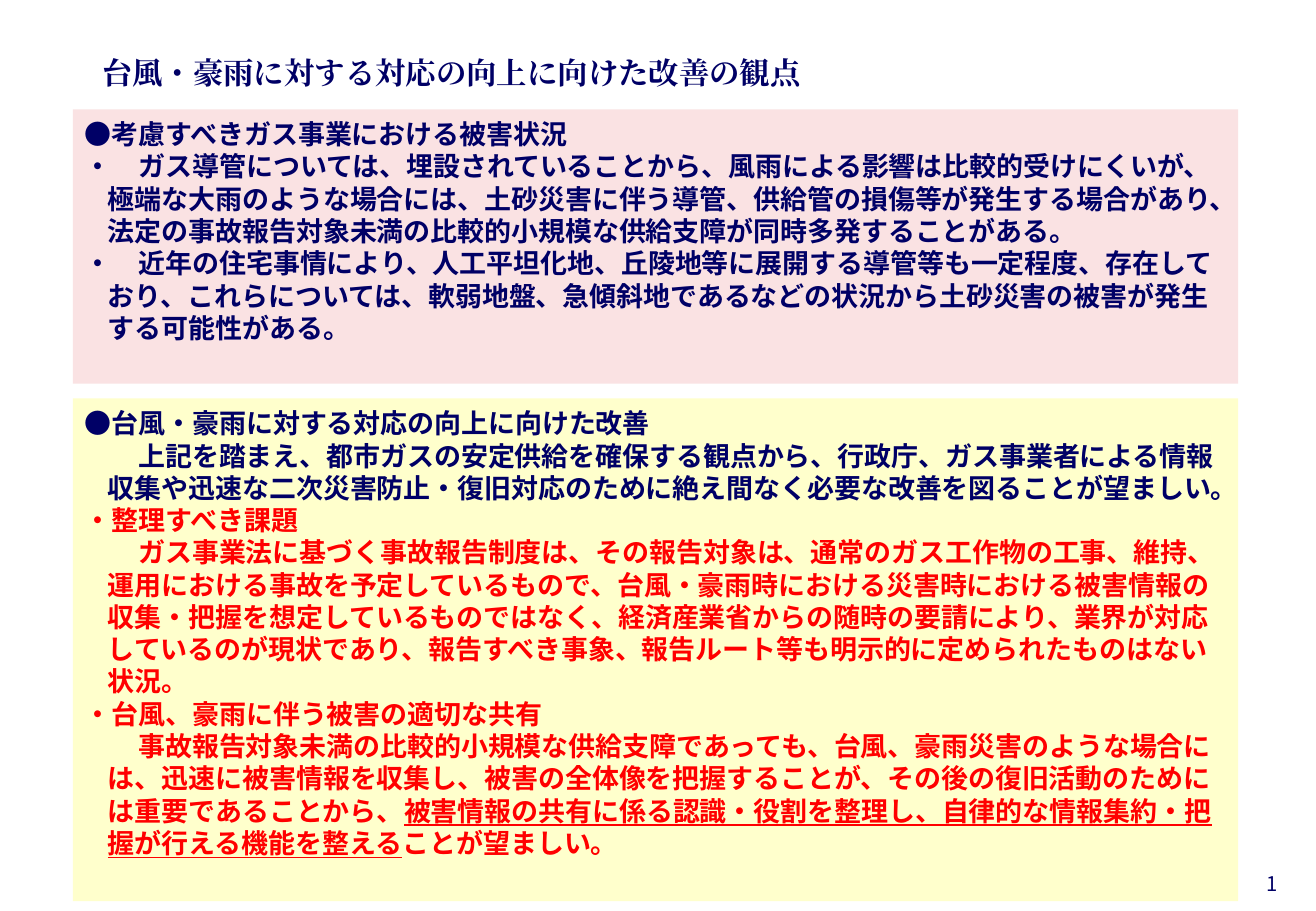
from dataclasses import dataclass
from typing import Any

from lxml.etree import SubElement
from pptx import Presentation
from pptx.dml.color import RGBColor
from pptx.enum.lang import MSO_LANGUAGE_ID
from pptx.enum.shapes import MSO_SHAPE
from pptx.enum.text import MSO_ANCHOR, MSO_AUTO_SIZE, PP_ALIGN
from pptx.oxml.ns import qn
from pptx.util import Inches, Pt

NAVY = RGBColor(0x00, 0x00, 0x66)
RED = RGBColor(0xFF, 0x00, 0x00)
PINK = RGBColor(0xFA, 0xE2, 0xE3)
CREAM = RGBColor(0xFF, 0xFF, 0xCC)
SANS = "Noto Sans CJK JP"
SERIF = "Times New Roman"

WIDE, HIGH = Inches(10.83), Inches(7.5)
HANG, LEAD = Inches(-0.19), Inches(0.25)
FRAME = {"word_wrap": True, "auto_size": MSO_AUTO_SIZE.NONE,
         "margin_left": Inches(0.1), "margin_right": Inches(0.1)}


@dataclass(frozen=True)
class Area:
    """Place and size in percent of the slide."""
    left: float
    top: float
    width: float
    height: float

    def box(self) -> tuple[int, int, int, int]:
        return (round(WIDE * self.left / 100), round(HIGH * self.top / 100),
                round(WIDE * self.width / 100), round(HIGH * self.height / 100))


@dataclass(frozen=True)
class Run:
    text: str
    line: bool = False


@dataclass(frozen=True)
class Para:
    runs: tuple[Run, ...]
    color: RGBColor = NAVY
    first: int = HANG


@dataclass(frozen=True)
class Panel:
    area: Area
    fill: RGBColor
    paras: tuple[Para, ...]


def put(target: Any, values: dict[str, Any]) -> None:
    for name, value in values.items():
        setattr(target, name, value)


def write(para: Any, text: str, face: str, size: int, color: RGBColor,
          **more: Any) -> None:
    run = para.add_run()
    run.text = text
    run.font.color.rgb = color
    put(run.font, {"name": face, "size": Pt(size),
                   "language_id": MSO_LANGUAGE_ID.JAPANESE, **more})
    SubElement(run.font._element, qn("a:ea")).set("typeface", face)


def draw(shapes: Any, panel: Panel) -> None:
    shape = shapes.add_shape(MSO_SHAPE.RECTANGLE, *panel.area.box())
    shape.shadow.inherit = False
    shape.fill.solid()
    shape.fill.fore_color.rgb = panel.fill
    shape.line.fill.background()
    frame = shape.text_frame
    put(frame, {**FRAME, "vertical_anchor": MSO_ANCHOR.TOP,
                "margin_top": Inches(0.07)})
    for i, item in enumerate(panel.paras):
        para = frame.add_paragraph() if i else frame.paragraphs[0]
        put(para, {"alignment": PP_ALIGN.LEFT, "line_spacing": Pt(19.15)})
        props = para._p.get_or_add_pPr()
        props.set("marL", str(-HANG))
        props.set("indent", str(item.first))
        for run in item.runs:
            write(para, run.text, SANS, 16, item.color,
                  bold=True, underline=run.line)


PANELS = (
    Panel(Area(5.54, 12, 88.55, 30.13), PINK, (
        Para((Run("●考慮すべきガス事業における被害状況"),)),
        Para((Run("・　ガス導管については、埋設されていることから、風雨による影響は比較的受けにくいが、極端な大雨のような場合には、土砂災害に伴う導管、供給管の損傷等が発生する場合があり、法定の事故報告対象未満の比較的小規模な供給支障が同時多発することがある。"),)),
        Para((Run("・　近年の住宅事情により、人工平坦化地、丘陵地等に展開する導管等も一定程度、存在しており、これらについては、軟弱地盤、急傾斜地であるなどの状況から土砂災害の被害が発生する可能性がある。"),)),
    )),
    Panel(Area(5.54, 43.73, 88.55, 55.2), CREAM, (
        Para((Run("●台風・豪雨に対する対応の向上に向けた改善"),)),
        Para((Run("上記を踏まえ、都市ガスの安定供給を確保する観点から、行政庁、ガス事業者による情報収集や迅速な二次災害防止・復旧対応のために絶え間なく必要な改善を図ることが望ましい。"),), first=LEAD),
        Para((Run("・整理すべき課題"),), RED),
        Para((Run("ガス事業法に基づく事故報告制度は、その報告対象は、通常のガス工作物の工事、維持、運用における事故を予定しているもので、台風・豪雨時における災害時における被害情報の収集・把握を想定しているものではなく、経済産業省からの随時の要請により、業界が対応しているのが現状であり、報告すべき事象、報告ルート等も明示的に定められたものはない状況。"),), RED, LEAD),
        Para((Run("・台風、豪雨に伴う被害の適切な共有"),), RED),
        Para((
            Run("事故報告対象未満の比較的小規模な供給支障であっても、台風、豪雨災害のような場合には、迅速に被害情報を収集し、被害の全体像を把握することが、その後の復旧活動のためには重要であることから、"),
            Run("被害情報の共有に係る認識・役割を整理し、自律的な情報集約・把握が行える機能を整える", True),
            Run("ことが望ましい。"),
        ), RED, LEAD),
    )),
)


def main() -> None:
    deck = Presentation()
    put(deck, {"slide_width": WIDE, "slide_height": HIGH})
    slide = deck.slides.add_slide(deck.slide_layouts[5])

    # Title
    title = slide.shapes.title
    spot = Area(6.83, 5.33, 86.24, 19.33).box()
    put(title, dict(zip(("left", "top", "width", "height"), spot)))
    put(title.text_frame, {**FRAME, "vertical_anchor": MSO_ANCHOR.TOP})
    head = title.text_frame.paragraphs[0]
    head.alignment = PP_ALIGN.LEFT
    write(head, "台風・豪雨に対する対応の向上に向けた改善の観点",
          SERIF, 18, NAVY, bold=True)

    # Text panels
    for panel in PANELS:
        draw(slide.shapes, panel)

    # Page number
    page = slide.shapes.add_textbox(*Area(75.44, 94.27, 22.53, 5.33).box())
    put(page.text_frame, {**FRAME, "vertical_anchor": MSO_ANCHOR.MIDDLE})
    foot = page.text_frame.paragraphs[0]
    foot.alignment = PP_ALIGN.RIGHT
    write(foot, "1", SANS, 12, NAVY)

    deck.save("out.pptx")


if __name__ == "__main__":
    main()
